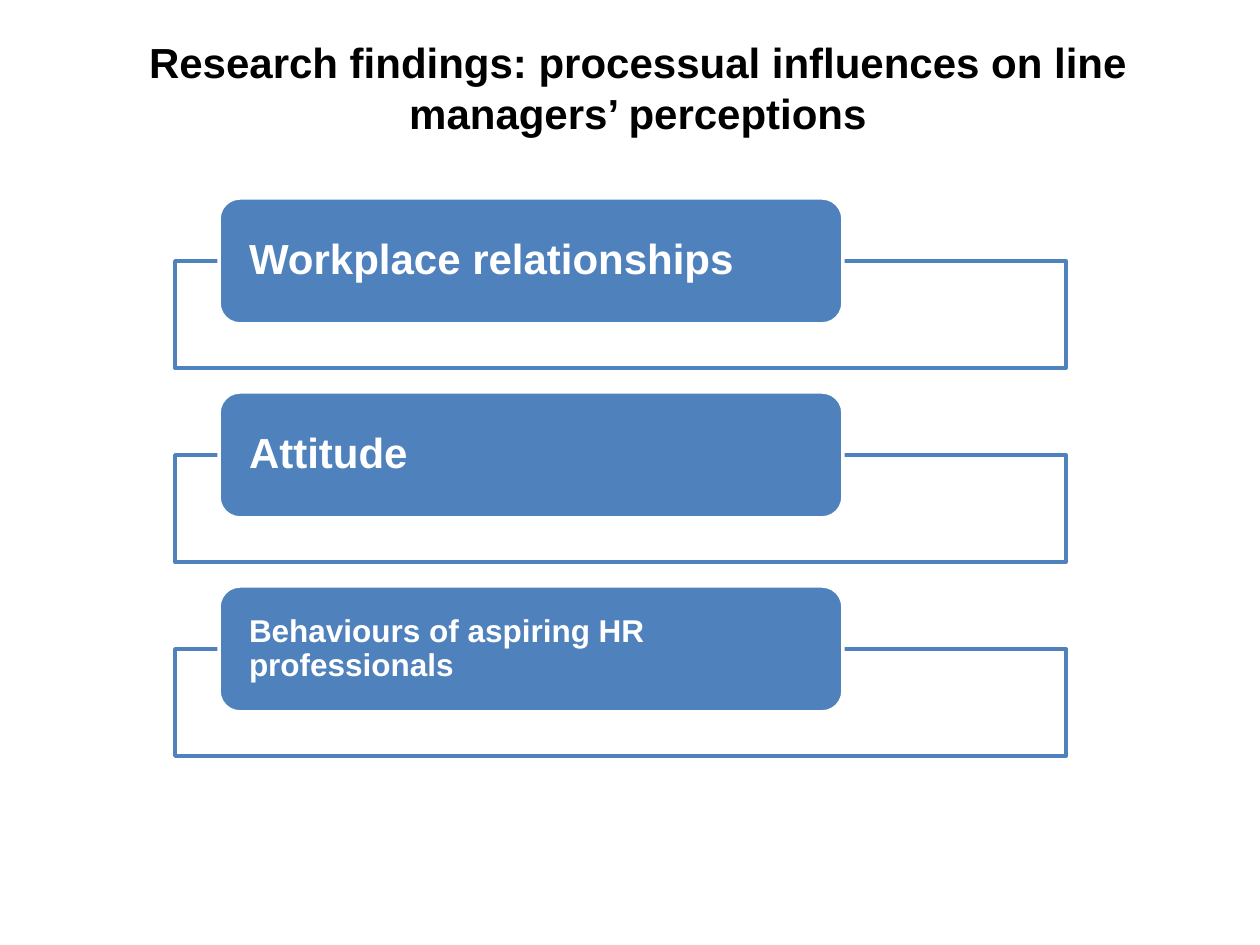
from lxml import etree
from pptx import Presentation, util as u
from pptx.dml.color import RGBColor
from pptx.enum import shapes, text
from pptx.oxml.ns import qn

PX = 914400 // 126
BLUE, WHITE, BLACK = "4F81BD", "FFFFFF", "000000"
TITLE = "Research findings: processual influences on line managers’ perceptions"
FINDINGS = [
    ("Workplace relationships", 24),
    ("Attitude", 24),
    ("Behaviours of aspiring HR professionals", 18),
]
FIRST_TOP, PITCH = 198, 194


def px(*lengths):
    return [u.Emu(length * PX) for length in lengths]


def color(value):
    return RGBColor.from_string(value)


def add_box(slide, kind, bounds, fill, line):
    shape = slide.shapes.add_shape(kind, *px(*bounds))
    shape.shadow.inherit = False
    shape.fill.solid()
    shape.fill.fore_color.rgb = color(fill)
    shape.line.color.rgb = color(line)
    shape.line.width = u.Pt(2)
    return shape


def set_opacity(shape, percent):
    fill_color = shape._element.spPr.find(qn("a:solidFill"))[0]
    etree.SubElement(fill_color, qn("a:alpha"), val=str(percent * 1000))


def add_text(slide, bounds, content, size, ink, anchor, alignment):
    shape = slide.shapes.add_textbox(*px(*bounds))
    frame = shape.text_frame
    frame.text = content
    frame.word_wrap = True
    frame.vertical_anchor = anchor
    paragraph = frame.paragraphs[0]
    paragraph.alignment = alignment
    font = paragraph.runs[0].font
    font.name, font.size, font.bold = "Arial", u.Pt(size), True
    font.color.rgb = color(ink)
    return shape


def add_title(slide):
    shape = add_text(slide, (103, 29, 1070, 115), TITLE, 24, BLACK,
                     text.MSO_ANCHOR.BOTTOM, text.PP_ALIGN.CENTER)
    shape.fill.solid()
    shape.fill.fore_color.rgb = color(WHITE)


def add_finding(slide, top, label, size):
    frame = add_box(slide, shapes.MSO_SHAPE.RECTANGLE,
                    (175, top + 63, 891, 107), WHITE, BLUE)
    set_opacity(frame, 90)
    add_box(slide, shapes.MSO_SHAPE.ROUNDED_RECTANGLE,
            (219, top, 624, 126), BLUE, WHITE)
    caption = add_text(slide, (225, top + 6, 612, 114), label, size, WHITE,
                       text.MSO_ANCHOR.MIDDLE, text.PP_ALIGN.LEFT).text_frame
    caption.margin_left, caption.margin_right = px(24, 24)
    caption.margin_top = caption.margin_bottom = 0
    caption.paragraphs[0].line_spacing = 0.9


def main():
    presentation = Presentation()
    presentation.slide_width, presentation.slide_height = px(1260, 945)
    slide = presentation.slides.add_slide(presentation.slide_layouts[6])
    add_title(slide)
    for row, (label, size) in enumerate(FINDINGS):
        add_finding(slide, FIRST_TOP + row * PITCH, label, size)
    presentation.save("out.pptx")


if __name__ == "__main__":
    main()
